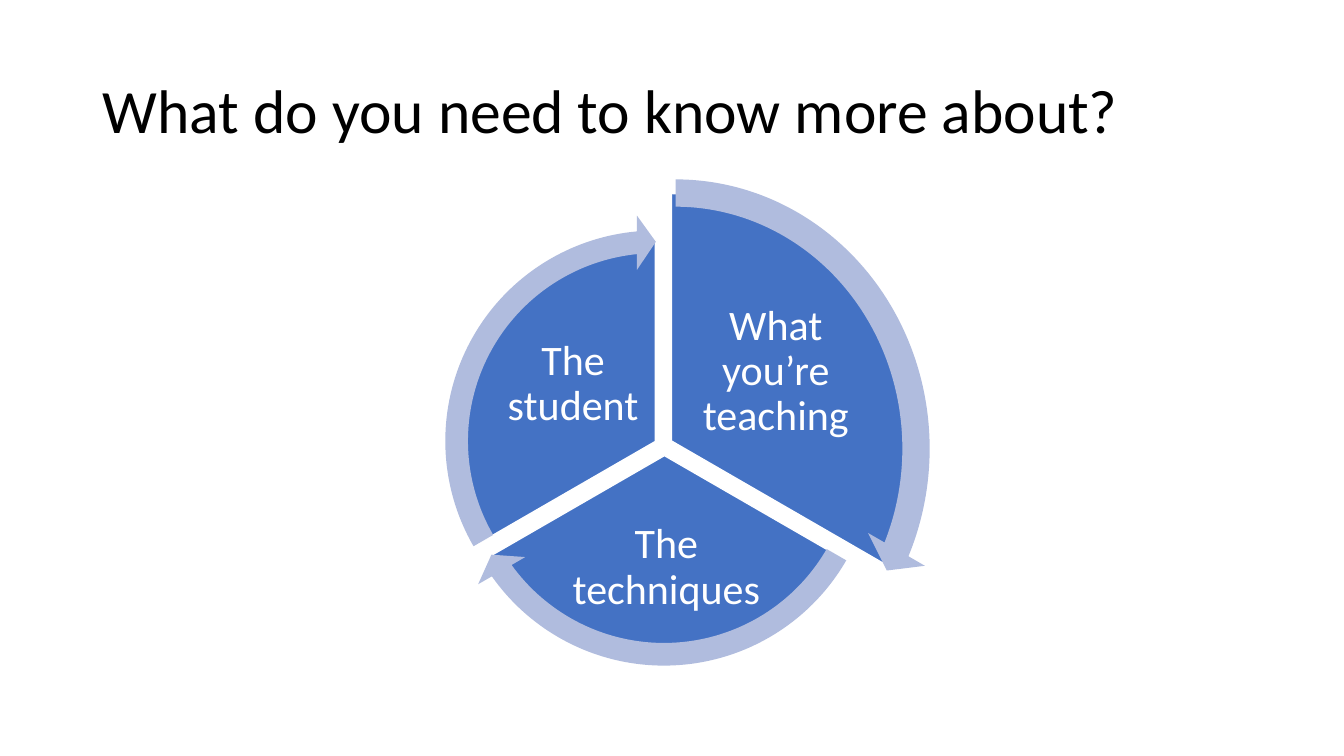
"""Build a slide with a three-part cycle of what a teacher needs to know."""
from pptx import Presentation
from pptx.dml.color import RGBColor
from pptx.enum.shapes import MSO_SHAPE
from pptx.enum.text import MSO_ANCHOR, PP_ALIGN
from pptx.util import Inches, Pt

COLORS = {"title": "000000", "sector": "4472C4", "arrow": "B0BCDE", "white": "FFFFFF"}
FONT = "Calibri"
TITLE = "What do you need to know more about?"
TITLE_BOX = (0.92, 0.4, 11.5, 1.45)
SECTORS = [
    {"label": "What you’re teaching", "start": 270, "end": 30,
     "pie": (4.15, 1.92, 5.02, 4.91), "text": (6.8, 2.96, 1.79, 1.46),
     "arrow": (3.99, 1.59, 5.42, 5.72)},
    {"label": "The techniques", "start": 30, "end": 150,
     "pie": (4.59, 2.52, 4, 4), "text": (5.54, 5.11, 2.14, 1.05),
     "arrow": (4.34, 2.27, 4.49, 4.49)},
    {"label": "The student", "start": 150, "end": 270,
     "pie": (4.5, 2.38, 4, 4), "text": (4.97, 3.22, 1.43, 1.19),
     "arrow": (4.26, 2.13, 4.49, 4.49)},
]
UNITS_PER_DEGREE = 0.6
HEAD_DEGREES = 5.46
BAND_WIDTH = 0.05
HEAD_WIDTH = 0.06
LABEL_INSET = 0.04


def color(name):
    return RGBColor.from_string(COLORS[name])


def box(lengths):
    return [Inches(length) for length in lengths]


def write(frame, text, size, color_name, alignment):
    frame.text = text
    frame.word_wrap = True
    frame.vertical_anchor = MSO_ANCHOR.MIDDLE
    paragraph = frame.paragraphs[0]
    paragraph.alignment = alignment
    paragraph.line_spacing = 0.9
    font = paragraph.runs[0].font
    font.name, font.size = FONT, Pt(size)
    font.color.rgb = color(color_name)


def add_filled(slide, preset, place, fill, adjustments):
    shape = slide.shapes.add_shape(preset, *box(place))
    shape.shadow.inherit = False
    shape.fill.solid()
    shape.fill.fore_color.rgb = color(fill)
    for index, value in enumerate(adjustments):
        shape.adjustments[index] = value
    return shape


def add_sector(slide, sector):
    angles = [sector[side] * UNITS_PER_DEGREE for side in ("start", "end")]
    pie = add_filled(slide, MSO_SHAPE.PIE, sector["pie"], "sector", angles)
    pie.line.color.rgb = color("white")
    pie.line.width = Pt(1)
    label = slide.shapes.add_textbox(*box(sector["text"])).text_frame
    label.margin_left = label.margin_right = Inches(LABEL_INSET)
    label.margin_top = label.margin_bottom = Inches(LABEL_INSET)
    write(label, sector["label"], 30, "white", PP_ALIGN.CENTER)


def add_arrow(slide, sector):
    head = HEAD_DEGREES * UNITS_PER_DEGREE
    start, tip = (sector[side] * UNITS_PER_DEGREE for side in ("start", "end"))
    arrow = add_filled(slide, MSO_SHAPE.CIRCULAR_ARROW, sector["arrow"], "arrow",
                       (BAND_WIDTH, head, tip - head, start, HEAD_WIDTH))
    arrow.line.fill.background()


def main():
    presentation = Presentation()
    presentation.slide_width, presentation.slide_height = box((13.33, 7.5))
    slide = presentation.slides.add_slide(presentation.slide_layouts[5])
    title = slide.shapes.title
    title.left, title.top, title.width, title.height = box(TITLE_BOX)
    write(title.text_frame, TITLE, 44, "title", PP_ALIGN.LEFT)
    for sector in SECTORS:
        add_sector(slide, sector)
    for sector in SECTORS:
        add_arrow(slide, sector)
    presentation.save("out.pptx")


if __name__ == "__main__":
    main()
